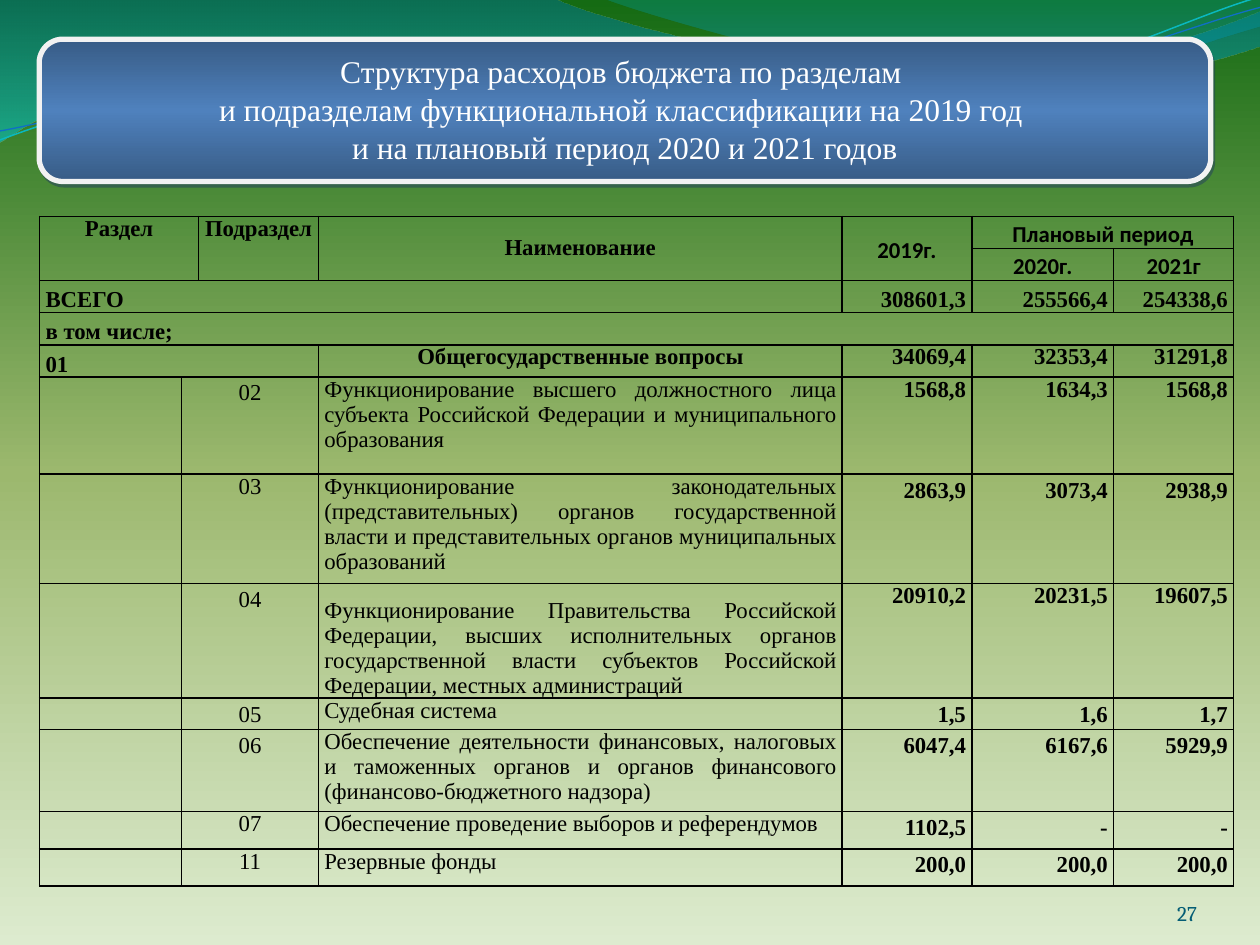
import math

from lxml import etree
from pptx import Presentation
from pptx import util as u
from pptx.dml.color import RGBColor
from pptx.enum import shapes, text
from pptx.oxml import ns

BLACK = RGBColor(0x00, 0x00, 0x00)
WHITE = RGBColor(0xFF, 0xFF, 0xFF)
FRAME = RGBColor(0xF2, 0xF2, 0xF2)
PAGE_BLUE = RGBColor(0x04, 0x5D, 0x75)
SHADOW = RGBColor(0x24, 0x3F, 0x60)
BLUE = RGBColor(0x4F, 0x81, 0xBD)
TEAL = RGBColor(0x0A, 0xB8, 0xBF)
ROYAL = RGBColor(0x0F, 0x6F, 0xC6)

# Gradient stops: position, colour, modifiers (percent)
MEADOW = [(0, RGBColor(0xDD, 0xEB, 0xCF), {}), (50, RGBColor(0x9C, 0xB8, 0x6E), {}),
          (100, RGBColor(0x15, 0x6B, 0x13), {})]
BANNER = [(0, BLUE, {"shade": 46}), (50, BLUE, {}), (100, BLUE, {"shade": 46})]
WIDE_WAVE = [(0, RGBColor(0x00, 0x74, 0xA1), {"alpha": 45}),
             (100, RGBColor(0x00, 0xC6, 0xCF), {"alpha": 55})]
SMALL_WAVE = [(0, RGBColor(0x00, 0xA1, 0xA9), {"alpha": 30}),
              (80, RGBColor(0x00, 0x8B, 0xBF), {"alpha": 45})]

# Outlines in cm: a start, then steps of one point (line) or three (curve)
WIDE_PATH = [[(0, -0.03)], [(11.18, -0.03)],
             [(12.09, 0.43), (16.87, 1.6), (19.25, 1.6)],
             [(21.67, 1.6), (24.33, 0.66), (25.4, 0.23)], [(25.43, 0.91)],
             [(24.97, 1.12), (22.1, 1.93), (18.95, 1.9)],
             [(15.8, 1.9), (9.7, 0.71), (6.53, 0.86)],
             [(3.28, 0.89), (1.17, 2.11), (-0.03, 2.87)]]
SMALL_PATH = [[(12.17, -0.03)], [(12.93, 0.28), (17.32, 1.57), (19.53, 1.65)],
              [(21.74, 1.75), (24.41, 0.81), (25.4, 0.53)], [(25.4, 0)]]
TEAL_PATH = [[(0, 2.82)], [(1.22, 2.36), (4.01, 1.45), (7.04, 1.32)],
             [(10.03, 1.19), (15.06, 2.26), (18.11, 2.03)],
             [(21.16, 1.8), (23.83, 0.38), (25.35, -0.05)]]
ROYAL_PATH = [[(0, 2.64)], [(1.19, 2.44), (4.17, 1.55), (7.19, 1.42)],
              [(10.24, 1.3), (15.16, 2.11), (18.21, 1.9)],
              [(21.23, 1.7), (23.9, 0.53), (25.4, 0.15)]]
STRAND_TILT = -2.7
STRAND_CENTER = (12.67, 1.47)

TITLE = ["Структура расходов бюджета по разделам ",
         "и подразделам функциональной классификации на 2019 год ",
         "и на плановый период 2020 и 2021 годов"]

SERIF = "Times New Roman"
TOP, MIDDLE, BOTTOM = text.MSO_ANCHOR.TOP, text.MSO_ANCHOR.MIDDLE, text.MSO_ANCHOR.BOTTOM
LEFT, CENTER = {"alignment": text.PP_ALIGN.LEFT}, {"alignment": text.PP_ALIGN.CENTER}
RIGHT, JUSTIFY = {"alignment": text.PP_ALIGN.RIGHT}, {"alignment": text.PP_ALIGN.JUSTIFY}
LOOSE = {"line_spacing": 1.15, "space_after": u.Pt(10)}
HEADING = {**CENTER, "space_before": u.Pt(12), "space_after": u.Pt(3)}

COLUMNS = [2.86, 0.3, 2.42, 10.55, 2.62, 2.86, 2.42]
ROWS = [0.65, 0.64, 0.65, 0.65, 0.65, 1.96, 1.96, 2.31, 0.41, 1.42, 0.75, 0.75]
MERGES = [(0, 0, 1, 1), (0, 2, 1, 2), (0, 3, 1, 3), (0, 4, 1, 4), (0, 5, 0, 6),
          (2, 0, 2, 3), (3, 0, 3, 6), (4, 0, 4, 2)]

# Header and total cells: row, column, text, paragraph format, anchor, font
HEAD_CELLS = [
    (0, 0, "Раздел", HEADING, TOP, SERIF),
    (0, 2, "Подраздел", HEADING, TOP, SERIF),
    (0, 3, "Наименование", HEADING, MIDDLE, SERIF),
    (0, 4, "2019г.", {**CENTER, **LOOSE}, MIDDLE, "Calibri"),
    (0, 5, "Плановый период", {**CENTER, **LOOSE}, TOP, "Calibri"),
    (1, 5, "2020г.", {**CENTER, **LOOSE}, TOP, "Calibri"),
    (1, 6, "2021г", {**CENTER, **LOOSE}, TOP, "Calibri"),
    (2, 0, "ВСЕГО", LEFT, BOTTOM, SERIF),
    (3, 0, "в том числе;", LEFT, BOTTOM, SERIF),
    (4, 0, "01", LEFT, BOTTOM, SERIF),
    (4, 3, "Общегосударственные вопросы", CENTER, TOP, SERIF)]
TOTALS = [(2, ["308601,3", "255566,4", "254338,6"], BOTTOM),
          (4, ["34069,4", "32353,4", "31291,8"], TOP)]

# Subsections: code, its spacing, name, its format, its anchor, amounts, their spacing
SUBSECTIONS = [
    ("02", LOOSE, "Функционирование высшего должностного лица субъекта Российской Федерации "
     "и муниципального образования", JUSTIFY, TOP, ["1568,8", "1634,3", "1568,8"], {}),
    ("03", {}, "Функционирование законодательных (представительных) органов государственной "
     "власти и представительных органов муниципальных образований", JUSTIFY, TOP,
     ["2863,9", "3073,4", "2938,9"], LOOSE),
    ("04", LOOSE, "Функционирование Правительства Российской Федерации, высших исполнительных "
     "органов государственной власти субъектов Российской Федерации, местных администраций",
     JUSTIFY, BOTTOM, ["20910,2", "20231,5", "19607,5"], {}),
    ("05", LOOSE, "Судебная система", LEFT, TOP, ["1,5", "1,6", "1,7"], LOOSE),
    ("06", LOOSE, "Обеспечение деятельности финансовых, налоговых и таможенных органов и органов "
     "финансового (финансово-бюджетного надзора)", JUSTIFY, TOP,
     ["6047,4", "6167,6", "5929,9"], LOOSE),
    ("07", {}, "Обеспечение проведение выборов и референдумов", JUSTIFY, TOP,
     ["1102,5", "-", "-"], LOOSE),
    ("11", {}, "Резервные фонды", JUSTIFY, TOP, ["200,0", "200,0", "200,0"], LOOSE)]


def apply(target, values):
    for key, value in values.items():
        setattr(target, key, value)


def add_xml(parent, tag, **attributes):
    return etree.SubElement(parent, ns.qn(tag), attributes)


def add_color(parent, color, modifiers):
    entry = add_xml(parent, "a:srgbClr", val=str(color))
    for name, percent in modifiers.items():
        add_xml(entry, f"a:{name}", val=str(percent * 1000))


def paint_gradient(fill, element, stops, angle):
    fill.gradient()
    gradient = element.find(".//" + ns.qn("a:gradFill"))
    for child in list(gradient):
        gradient.remove(child)
    stop_list = add_xml(gradient, "a:gsLst")
    for position, color, modifiers in stops:
        add_color(add_xml(stop_list, "a:gs", pos=str(position * 1000)), color, modifiers)
    add_xml(gradient, "a:lin", ang=str(angle * 60000), scaled="0")


def write(paragraph, words, size, color, font, layout, bold=False):
    run = paragraph.add_run()
    run.text = words
    apply(paragraph, layout)
    apply(run.font, {"name": font, "size": u.Pt(size), "bold": bold})
    run.font.color.rgb = color


def add_outline(slide, steps, close):
    start, *rest = [(u.Cm(x), u.Cm(y)) for step in steps for x, y in step]
    builder = slide.shapes.build_freeform(*start)
    builder.add_line_segments(rest, close=close)
    outline = builder.convert_to_shape()
    outline.shadow.inherit = False
    # Join each three points of a curve step into one Bezier segment
    segments = iter(outline.element.findall(".//" + ns.qn("a:lnTo")))
    for step in steps[1:]:
        lines = [next(segments) for _ in step]
        if len(step) == 3:
            curve = etree.Element(ns.qn("a:cubicBezTo"))
            lines[0].addprevious(curve)
            for line in lines:
                curve.append(line[0])
                line.getparent().remove(line)
    return outline


def add_wave(slide, steps, stops):
    wave = add_outline(slide, steps, True)
    paint_gradient(wave.fill, wave.element, stops, 90)
    wave.line.fill.background()


def turn(point, degrees):
    cos, sin = math.cos(math.radians(degrees)), math.sin(math.radians(degrees))
    dx, dy = (value - middle for value, middle in zip(point, STRAND_CENTER))
    return STRAND_CENTER[0] + dx * cos - dy * sin, STRAND_CENTER[1] + dx * sin + dy * cos


def add_strand(slide, steps, color, width):
    level = [[turn(point, -STRAND_TILT) for point in step] for step in steps]
    strand = add_outline(slide, level, False)
    strand.rotation = STRAND_TILT
    strand.fill.background()
    strand.line.color.rgb = color
    strand.line.width = u.Pt(width)


def add_title(slide):
    banner = slide.shapes.add_shape(shapes.MSO_SHAPE.FLOWCHART_ALTERNATE_PROCESS,
                                    u.Cm(0.79), u.Cm(0.79), u.Cm(23.62), u.Cm(2.87))
    banner.line.color.rgb = FRAME
    banner.line.width = u.Pt(3)
    paint_gradient(banner.fill, banner.element, BANNER, 90)
    banner.shadow.inherit = False
    effects = banner.element.find(".//" + ns.qn("a:effectLst"))
    shadow = add_xml(effects, "a:outerShdw", dist=str(u.Pt(2.2)), dir=str(63 * 60000))
    add_color(shadow, SHADOW, {"alpha": 50})
    frame = banner.text_frame
    frame.vertical_anchor = TOP
    for i, line in enumerate(TITLE):
        write(frame.add_paragraph() if i else frame.paragraphs[0], line, 18, WHITE, SERIF, CENTER)


def add_page_number(slide):
    frame = slide.shapes.add_textbox(u.Cm(22.02), u.Cm(17.65), u.Cm(2.11), u.Cm(1.02)).text_frame
    apply(frame, {"margin_left": 0, "margin_right": 0, "margin_top": 0, "margin_bottom": 0,
                  "word_wrap": True, "vertical_anchor": BOTTOM})
    write(frame.paragraphs[0], "27", 12, PAGE_BLUE, "Cambria", RIGHT)


def format_cell(cell):
    cell.fill.background()
    apply(cell, {"margin_left": u.Cm(0.12), "margin_right": u.Cm(0.12),
                 "margin_top": 0, "margin_bottom": 0})
    properties = cell._tc.get_or_add_tcPr()
    for i, side in enumerate("LRTB"):
        border = add_xml(properties, f"a:ln{side}", w=str(u.Pt(1)))
        add_color(add_xml(border, "a:solidFill"), BLACK, {})
        properties.insert(i, border)
    if not cell.text:
        add_xml(cell.text_frame.paragraphs[0]._p, "a:endParaRPr", sz="1300")


def add_budget_table(slide):
    holder = slide.shapes.add_table(len(ROWS), len(COLUMNS), u.Cm(0.8), u.Cm(4.36),
                                    u.Cm(sum(COLUMNS)), u.Cm(sum(ROWS)))
    table = holder.table
    apply(table, {"first_row": False, "horz_banding": False})
    for column, width in zip(table.columns, COLUMNS):
        column.width = u.Cm(width)
    for row, height in zip(table.rows, ROWS):
        row.height = u.Cm(height)

    def put(row, column, words, layout, anchor=TOP, font=SERIF, bold=True):
        cell = table.cell(row, column)
        cell.vertical_anchor = anchor
        write(cell.text_frame.paragraphs[0], words, 13, BLACK, font, layout, bold)

    def put_amounts(row, amounts, layout, anchor=TOP):
        for column, amount in enumerate(amounts, 4):
            put(row, column, amount, {**RIGHT, **layout}, anchor)

    # Header, totals, then one row per subsection
    for entry in HEAD_CELLS:
        put(*entry)
    for row, amounts, anchor in TOTALS:
        put_amounts(row, amounts, {}, anchor)
    for row, entry in enumerate(SUBSECTIONS, 5):
        code, code_spacing, name, name_layout, anchor, amounts, amount_spacing = entry
        put(row, 1, code, {**CENTER, **code_spacing}, bold=False)
        put(row, 3, name, name_layout, anchor, bold=False)
        put_amounts(row, amounts, amount_spacing)

    for cell in table.iter_cells():
        format_cell(cell)
    code_merges = [(row, 1, row, 2) for row in range(5, len(ROWS))]
    for top, left, bottom, right in MERGES + code_merges:
        table.cell(top, left).merge(table.cell(bottom, right))


def main():
    deck = Presentation()
    deck.slide_width, deck.slide_height = u.Cm(25.4), u.Cm(19.05)
    slide = deck.slides.add_slide(deck.slide_layouts[6])
    # Backdrop
    paint_gradient(slide.background.fill, slide.element, MEADOW, 270)
    add_wave(slide, WIDE_PATH, WIDE_WAVE)
    add_wave(slide, SMALL_PATH, SMALL_WAVE)
    add_strand(slide, TEAL_PATH, TEAL, 0.85)
    add_strand(slide, ROYAL_PATH, ROYAL, 0.75)
    # Content
    add_page_number(slide)
    add_title(slide)
    add_budget_table(slide)
    deck.save("out.pptx")


if __name__ == "__main__":
    main()
